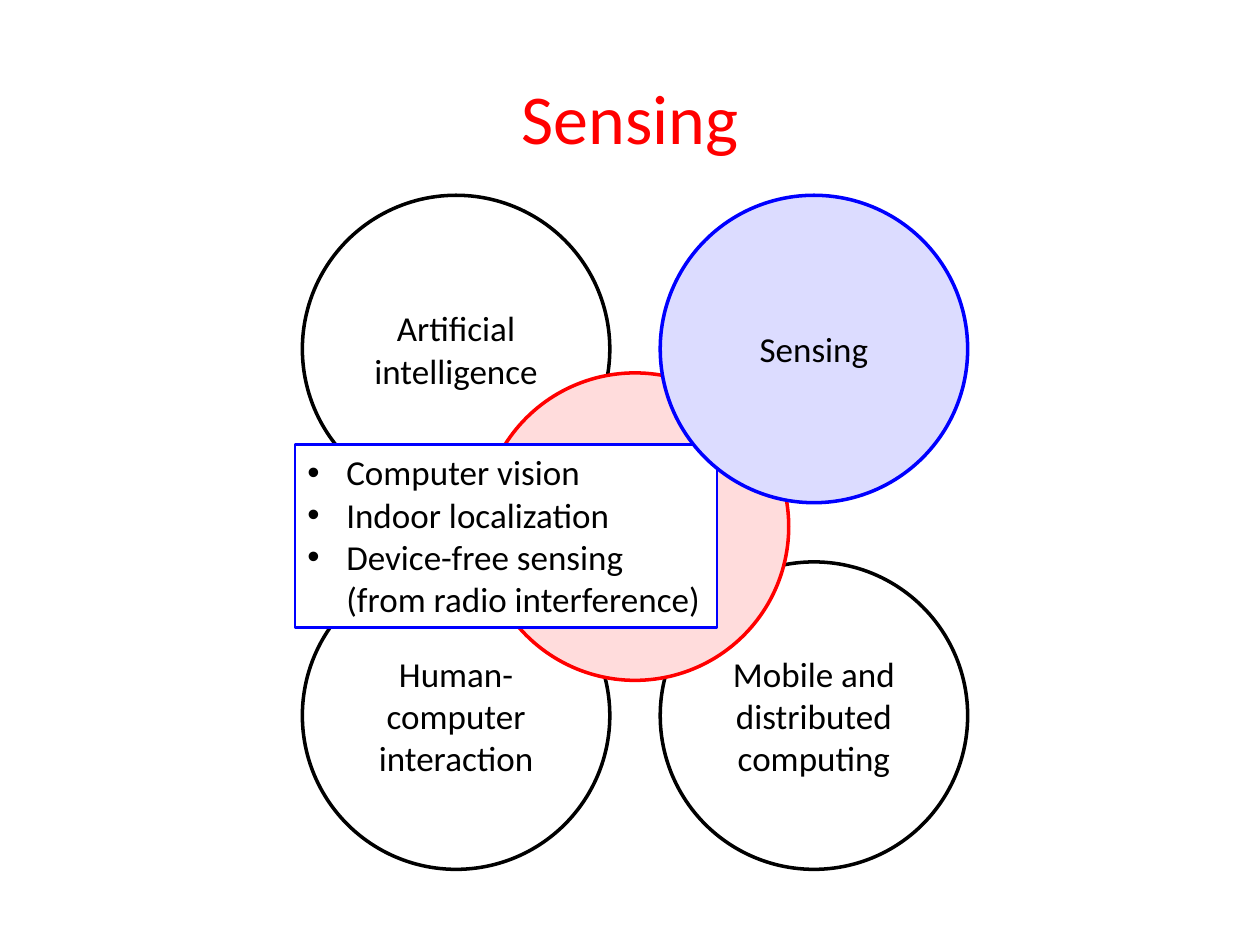
from lxml import etree
from pptx import Presentation
from pptx.dml.color import RGBColor
from pptx.enum import shapes, text
from pptx.oxml.ns import qn
from pptx.util import Inches, Pt

BLACK = RGBColor(0, 0, 0)
WHITE = RGBColor(255, 255, 255)
RED = RGBColor(255, 0, 0)
BLUE = RGBColor(0, 0, 255)
PINK = RGBColor(255, 220, 220)
PALE = RGBColor(220, 220, 255)


class Deck:
    font = "Calibri"
    size = 20

    def __init__(self, slide):
        self.slide = slide

    def style(self, para, align, size=size, color=BLACK):
        para.alignment = align
        for run in para.runs:
            run.font.name = self.font
            run.font.size = Pt(size)
            run.font.color.rgb = color

    def title(self, words, left, top, width, height):
        title = self.slide.shapes.title
        title.left, title.top = Inches(left), Inches(top)
        title.width, title.height = Inches(width), Inches(height)
        frame = title.text_frame
        frame.text = words
        frame.vertical_anchor = text.MSO_ANCHOR.MIDDLE
        self.style(frame.paragraphs[0], text.PP_ALIGN.CENTER, 40, RED)

    def shape(self, kind, left, top, width, height, fill, line, weight):
        shape = self.slide.shapes.add_shape(
            kind, Inches(left), Inches(top), Inches(width), Inches(height))
        shape.shadow.inherit = False
        if fill is None:
            shape.fill.background()
        else:
            shape.fill.solid()
            shape.fill.fore_color.rgb = fill
        shape.line.color.rgb = line
        shape.line.width = Pt(weight)
        return shape

    def circle(self, words, left, top, side, fill=None, line=BLACK):
        shape = self.shape(shapes.MSO_SHAPE.OVAL, left, top, side, side,
                           fill, line, 2)
        frame = shape.text_frame
        frame.word_wrap = True
        frame.vertical_anchor = text.MSO_ANCHOR.MIDDLE
        frame.text = words
        self.style(frame.paragraphs[0], text.PP_ALIGN.CENTER)

    def bullets(self, items, left, top, width, height):
        box = self.shape(shapes.MSO_SHAPE.RECTANGLE, left, top, width, height,
                         WHITE, BLUE, 1.5)
        frame = box.text_frame
        frame.word_wrap = False
        frame.auto_size = text.MSO_AUTO_SIZE.SHAPE_TO_FIT_TEXT
        frame.vertical_anchor = text.MSO_ANCHOR.TOP
        for i, item in enumerate(items):
            para = frame.add_paragraph() if i else frame.paragraphs[0]
            para.text = item
            self.style(para, text.PP_ALIGN.LEFT)
            # Hanging indent and bullet sign
            props = para._p.get_or_add_pPr()
            props.set("marL", str(Inches(0.31)))
            props.set("indent", str(-Inches(0.31)))
            etree.SubElement(props, qn("a:buFont")).set("typeface", "Arial")
            etree.SubElement(props, qn("a:buChar")).set("char", "•")


def main():
    show = Presentation()
    show.slide_width, show.slide_height = Inches(10), Inches(7.5)
    deck = Deck(show.slides.add_slide(show.slide_layouts[5]))
    deck.title("Sensing", 0.5, 0.3, 9, 1.25)

    # Fields around the centre
    side = 2.44
    left, right = 2.4, 5.24
    top, low = 1.55, 4.46
    deck.circle("Mobile and distributed computing", right, low, side)
    deck.circle("Human-computer interaction", left, low, side)
    deck.circle("Artificial intelligence", left, top, side)
    deck.circle("", (left + right) / 2, 2.96, side, PINK, RED)

    # Topics, with the current field in front
    deck.bullets(["Computer vision", "Indoor localization",
                  "Device-free sensing\n(from radio interference)"],
                 2.34, 3.53, 3.35, 1.45)
    deck.circle("Sensing", right, top, side, PALE, BLUE)

    show.save("out.pptx")


if __name__ == "__main__":
    main()
